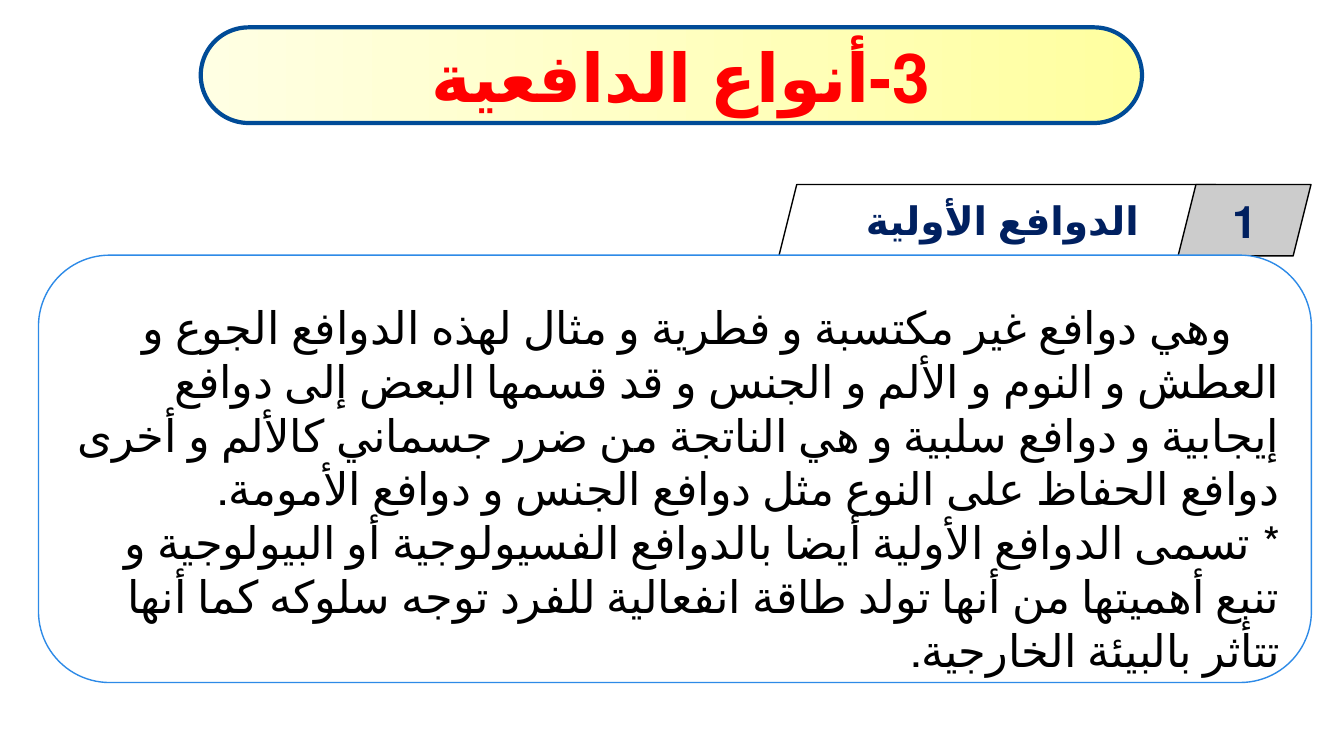
from dataclasses import dataclass

from pptx import Presentation
from pptx import util as u
from pptx.dml.color import RGBColor
from pptx.enum import lang, shapes, text

FONT = "Arial"
WHITE = RGBColor(0xFF, 0xFF, 0xFF)
BLACK = RGBColor(0x00, 0x00, 0x00)
RED = RGBColor(0xFF, 0x00, 0x00)
NAVY = RGBColor(0x00, 0x20, 0x60)
DARK_BLUE = RGBColor(0x00, 0x4B, 0x97)
SKY_BLUE = RGBColor(0x2D, 0x8A, 0xE7)
GREY = RGBColor(0xCC, 0xCC, 0xCC)
YELLOW = RGBColor(0xFF, 0xFF, 0xA0)
PALE_YELLOW = RGBColor(0xFF, 0xFF, 0xE3)

ROUNDED = shapes.MSO_SHAPE.ROUNDED_RECTANGLE
SLANTED = shapes.MSO_SHAPE.PARALLELOGRAM


@dataclass
class Panel:
    """A filled outline with right-to-left text; lengths in centimetres."""
    preset: shapes.MSO_SHAPE
    left: float
    top: float
    width: float
    height: float
    fills: tuple[RGBColor, ...]
    line: RGBColor
    line_width: float
    paragraphs: tuple[str, ...]
    size: int
    color: RGBColor
    bold: bool = True
    align: text.PP_ALIGN = text.PP_ALIGN.CENTER
    anchor: text.MSO_ANCHOR = text.MSO_ANCHOR.MIDDLE
    corner: float | None = None
    inset_left: float = 0.25
    inset_top: float = 0.13
    first_indent: float = 0


PANELS = (
    # Title
    Panel(ROUNDED, 5.06, 0.69, 23.72, 2.41, (YELLOW, PALE_YELLOW), DARK_BLUE, 3,
          ("3-أنواع الدافعية",), 48, RED, corner=0.5, inset_left=0.72),
    # Section heading and its number
    Panel(SLANTED, 19.63, 4.65, 11.0, 1.8, (WHITE,), BLACK, 1,
          ("الدوافع الأولية",), 28, NAVY, inset_left=0.52),
    Panel(SLANTED, 29.69, 4.65, 3.35, 1.8, (GREY,), BLACK, 1,
          ("1",), 32, NAVY),
    # Body text
    Panel(ROUNDED, 0.97, 6.43, 32.08, 10.77, (WHITE,), SKY_BLUE, 1,
          ("وهي دوافع غير مكتسبة و فطرية و مثال لهذه الدوافع الجوع و العطش و النوم "
           "و الألم و الجنس و قد قسمها البعض إلى دوافع إيجابية و دوافع سلبية و هي "
           "الناتجة من ضرر جسماني كالألم و أخرى دوافع الحفاظ على النوع مثل دوافع "
           "الجنس و دوافع الأمومة.",
           "* تسمى الدوافع الأولية أيضا بالدوافع الفسيولوجية أو البيولوجية و تنبع "
           "أهميتها من أنها تولد طاقة انفعالية للفرد توجه سلوكه كما أنها تتأثر "
           "بالبيئة الخارجية."),
          32, BLACK, bold=False, align=text.PP_ALIGN.RIGHT,
          anchor=text.MSO_ANCHOR.TOP, inset_top=0.6, first_indent=1.2),
)


def paint(box, panel: Panel) -> None:
    """Set the fill and the outline."""
    if len(panel.fills) == 1:
        box.fill.solid()
        box.fill.fore_color.rgb = panel.fills[0]
    else:
        box.fill.gradient()
        box.fill.gradient_angle = 180
        for stop, color in zip(box.fill.gradient_stops, panel.fills):
            stop.color.rgb = color
    box.line.color.rgb = panel.line
    box.line.width = u.Pt(panel.line_width)
    box.shadow.inherit = False


def write(box, panel: Panel) -> None:
    """Fill the box with right-to-left paragraphs."""
    frame = box.text_frame
    frame.word_wrap = True
    frame.vertical_anchor = panel.anchor
    frame.margin_left = u.Cm(panel.inset_left)
    frame.margin_top = u.Cm(panel.inset_top)
    for index, words in enumerate(panel.paragraphs):
        para = frame.add_paragraph() if index else frame.paragraphs[0]
        para.text = words
        para.alignment = panel.align
        properties = para._p.get_or_add_pPr()
        properties.set("rtl", "1")
        if panel.first_indent and index == 0:
            properties.set("marL", "0")
            properties.set("indent", str(int(u.Cm(panel.first_indent))))
        para.font.size = u.Pt(panel.size)
        para.font.bold = panel.bold
        para.font.color.rgb = panel.color
        para.font.name = FONT
        # The language of a span selects its Arabic letter forms
        for span in para.runs:
            span.font.language_id = lang.MSO_LANGUAGE_ID.ARABIC_ALGERIA


def draw(page, panel: Panel) -> None:
    box = page.shapes.add_shape(panel.preset, u.Cm(panel.left), u.Cm(panel.top),
                                u.Cm(panel.width), u.Cm(panel.height))
    if panel.corner is not None:
        box.adjustments[0] = panel.corner
    paint(box, panel)
    write(box, panel)


def main() -> None:
    deck = Presentation()
    deck.slide_width, deck.slide_height = u.Cm(33.87), u.Cm(19.05)
    page = deck.slides.add_slide(deck.slide_layouts[6])
    for panel in PANELS:
        draw(page, panel)
    deck.save("out.pptx")


if __name__ == "__main__":
    main()
